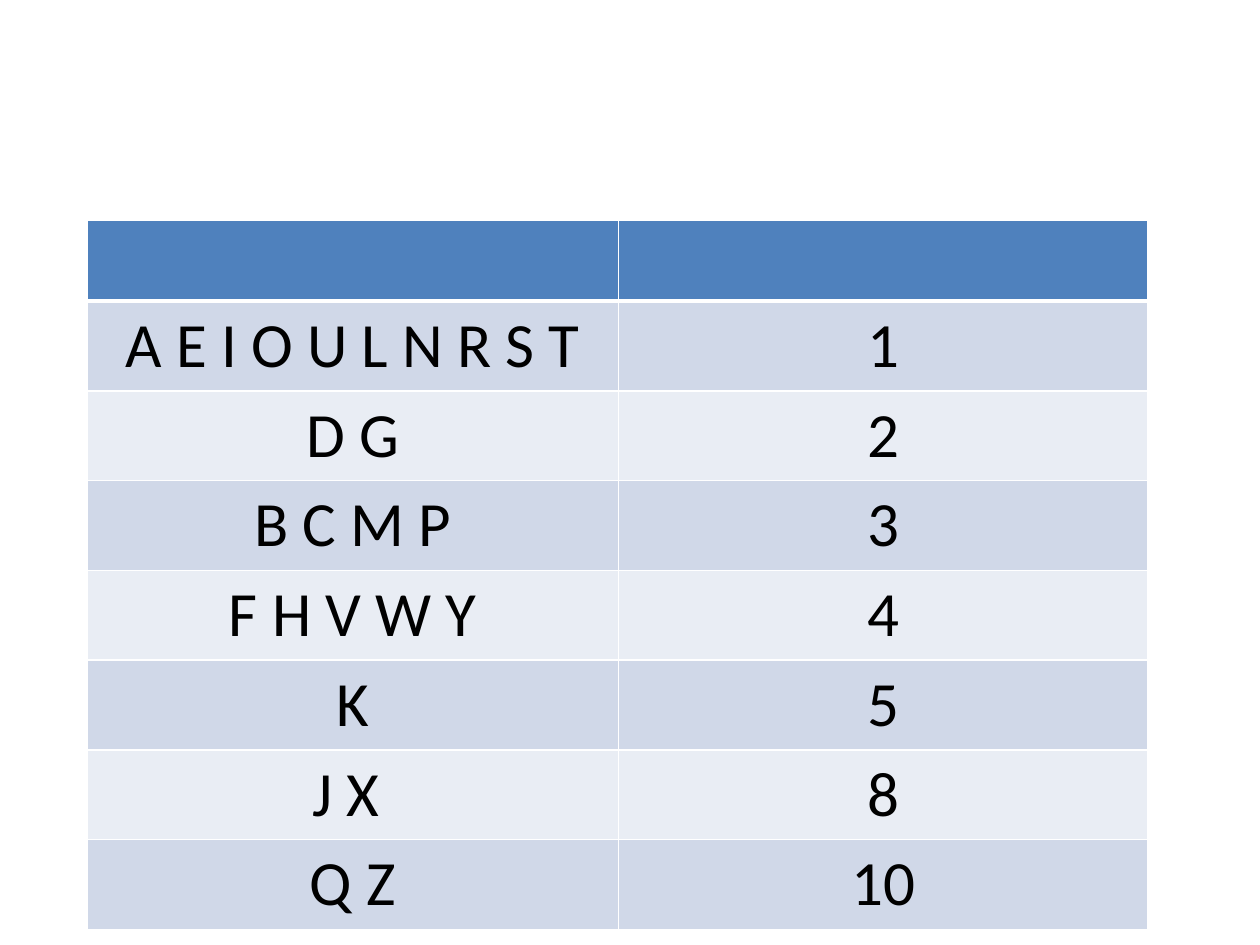
from dataclasses import dataclass

from lxml.etree import SubElement
from pptx import Presentation
from pptx.dml.color import RGBColor
from pptx.enum.text import PP_ALIGN
from pptx.oxml.ns import qn
from pptx.util import Inches, Pt


@dataclass(frozen=True)
class Theme:
    font: str = "Calibri"
    size: int = 36
    text: str = "000000"
    header: str = "4F81BD"
    bands: tuple = ("D0D8E8", "E9EDF4")
    border: str = "FFFFFF"
    thin: int = 1
    thick: int = 3


THEME = Theme()
LETTER_SCORES = [
    ("A E I O U L N R S T", 1),
    ("D G", 2),
    ("B C M P", 3),
    ("F H V W Y", 4),
    ("K", 5),
    ("J X ", 8),
    ("Q Z", 10),
]


def set_borders(cell, top, bottom):
    properties = cell._tc.get_or_add_tcPr()
    widths = {"a:lnL": THEME.thin, "a:lnR": THEME.thin, "a:lnT": top, "a:lnB": bottom}
    for tag, width in widths.items():
        line = SubElement(properties, qn(tag), w=str(Pt(width)))
        fill = SubElement(line, qn("a:solidFill"))
        SubElement(fill, qn("a:srgbClr"), val=THEME.border)


def style_cell(cell, row_index):
    set_borders(
        cell,
        top=THEME.thick if row_index == 1 else THEME.thin,
        bottom=THEME.thick if row_index == 0 else THEME.thin,
    )
    color = THEME.bands[(row_index - 1) % 2] if row_index else THEME.header
    cell.fill.solid()
    cell.fill.fore_color.rgb = RGBColor.from_string(color)


def write_cell(cell, text):
    cell.text = text
    paragraph = cell.text_frame.paragraphs[0]
    paragraph.alignment = PP_ALIGN.CENTER
    paragraph.font.name = THEME.font
    paragraph.font.size = Pt(THEME.size)
    paragraph.font.color.rgb = RGBColor.from_string(THEME.text)


def add_score_table(slide, left, top, column_widths, row_height):
    row_count = len(LETTER_SCORES) + 1
    table = slide.shapes.add_table(
        row_count, len(column_widths), left, top,
        sum(column_widths), row_height * row_count,
    ).table
    for column, width in zip(table.columns, column_widths):
        column.width = width
    for row_index, row in enumerate(table.rows):
        for cell in row.cells:
            style_cell(cell, row_index)
    for row_index, (letters, score) in enumerate(LETTER_SCORES, start=1):
        write_cell(table.cell(row_index, 0), letters)
        write_cell(table.cell(row_index, 1), str(score))


def main():
    presentation = Presentation()
    presentation.slide_width = Inches(10)
    presentation.slide_height = Inches(7.5)
    slide = presentation.slides.add_slide(presentation.slide_layouts[6])
    add_score_table(
        slide, Inches(0.69), Inches(1.75),
        column_widths=[Inches(4.22), Inches(4.2)], row_height=Inches(0.64),
    )
    presentation.save("out.pptx")


if __name__ == "__main__":
    main()
